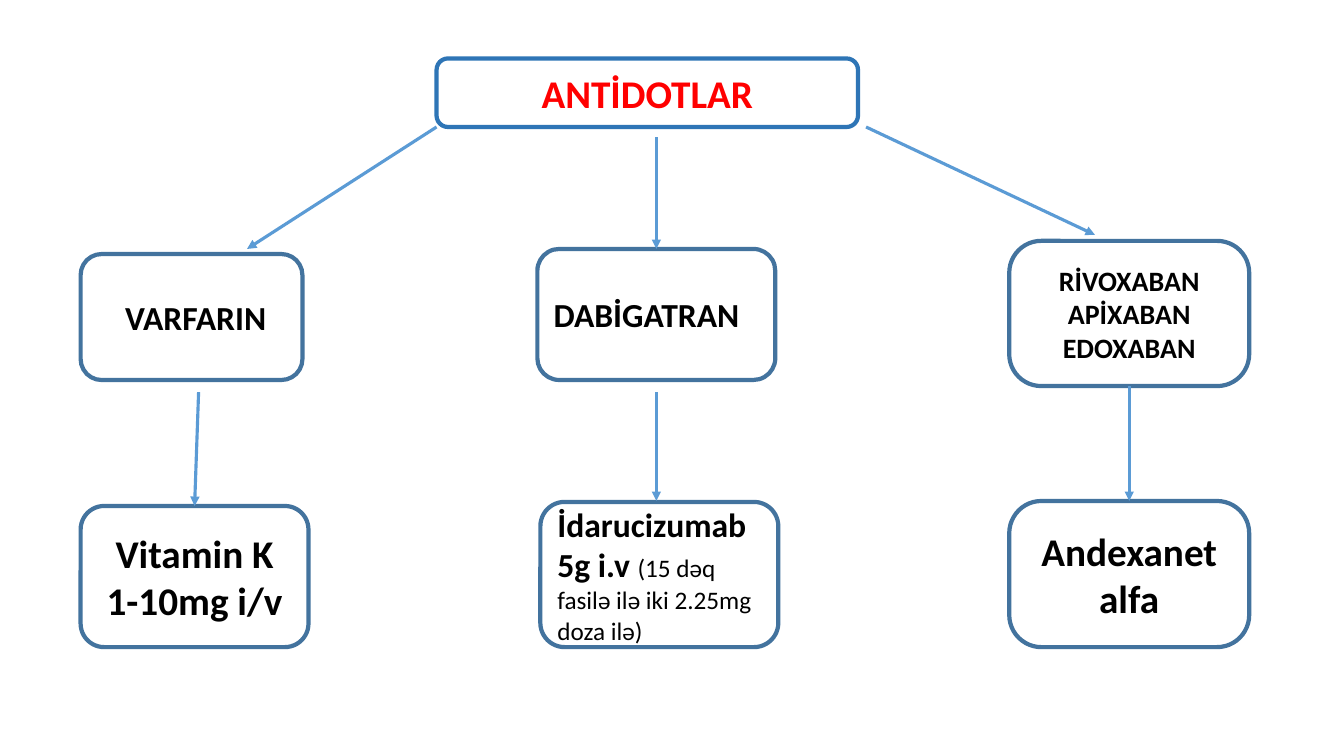
import pptx
import pptx.util
import pptx.dml.color
import pptx.enum.shapes
import pptx.enum.text
import pptx.oxml.ns
import lxml.etree

Inches = pptx.util.Inches
FONT = "Calibri"
COLORS = {
    "white": "FFFFFF", "black": "000000", "title": "FF0000",
    "title_line": "2E75B6", "box_line": "43739E", "arrow": "5B9BD5",
}

# Boxes: name, (left, top, width, height), paragraphs of (text, size, bold), format
BOXES = [
    ("title", (4.33, 0.58, 4.18, 0.68), [[("ANTİDOTLAR", 28, True)]],
     {"color": "title", "line": "title_line"}),
    ("warfarin", (0.8, 2.52, 2.2, 1.25), [[("VARFARIN", 24, True)]],
     {"centered": False, "inset": 0.38}),
    ("xabans", (10.01, 2.39, 2.38, 1.44),
     [[(drug, 20, True)] for drug in ("RİVOXABAN", "APİXABAN", "EDOXABAN")],
     {"corner": 0.22}),
    ("dabigatran", (5.33, 2.47, 2.36, 1.3), [[("DABİGATRAN", 24, True)]],
     {"centered": False}),
    ("vitamin", (0.8, 5.02, 2.26, 1.4), [[("Vitamin K 1-10mg i/v", 28, True)]], {}),
    ("idarucizumab", (5.36, 4.98, 2.36, 1.44),
     [[("İdarucizumab 5g i.v ", 24, True),
       ("(15 dəq fasilə ilə iki 2.25mg doza ilə)", 18, False)]],
     {"centered": False}),
    ("andexanet", (10.01, 4.97, 2.38, 1.45), [[("Andexanet alfa", 28, True)]],
     {"corner": 0.22}),
]

# Arrows: start, end, box joined at its bottom, box joined at its top
ARROWS = [
    ((8.59, 1.26), (10.86, 2.33), None, None),
    ((4.33, 1.26), (2.45, 2.47), None, None),
    ((6.51, 1.36), (6.51, 2.47), None, "dabigatran"),
    ((6.51, 3.89), (6.51, 4.97), None, None),
    ((11.2, 3.83), (11.2, 4.97), "xabans", "andexanet"),
    ((1.97, 3.89), (1.93, 5.02), None, "vitamin"),
]


def rgb(name):
    return pptx.dml.color.RGBColor.from_string(COLORS[name])


def write_text(box, paragraphs, color="black", centered=True, inset=0.1):
    frame = box.text_frame
    frame.word_wrap = True
    frame.margin_left = Inches(inset)
    frame.vertical_anchor = pptx.enum.text.MSO_ANCHOR.MIDDLE
    align = pptx.enum.text.PP_ALIGN
    for index, spans in enumerate(paragraphs):
        para = frame.paragraphs[0] if index == 0 else frame.add_paragraph()
        para.alignment = align.CENTER if centered else align.LEFT
        for text, size, bold in spans:
            span = para.add_run()
            span.text = text
            span.font.name = FONT
            span.font.size = pptx.util.Pt(size)
            span.font.bold = bold
            span.font.color.rgb = rgb(color)


def add_box(page, place, paragraphs, line="box_line", corner=None, **text_format):
    box = page.shapes.add_shape(
        pptx.enum.shapes.MSO_SHAPE.ROUNDED_RECTANGLE, *map(Inches, place))
    box.shadow.inherit = False
    if corner is not None:
        box.adjustments[0] = corner
    box.fill.solid()
    box.fill.fore_color.rgb = rgb("white")
    box.line.color.rgb = rgb(line)
    box.line.width = pptx.util.Pt(3)
    write_text(box, paragraphs, **text_format)
    return box


def add_arrow(page, start, end, source, target):
    arrow = page.shapes.add_connector(
        pptx.enum.shapes.MSO_CONNECTOR.STRAIGHT, *map(Inches, start + end))
    if source is not None:
        arrow.begin_connect(source, 2)
    if target is not None:
        arrow.end_connect(target, 0)
    arrow.line.color.rgb = rgb("arrow")
    arrow.line.width = pptx.util.Pt(2.25)
    # Arrowhead, and no shadow
    qn = pptx.oxml.ns.qn
    lxml.etree.SubElement(arrow.line._get_or_add_ln(), qn("a:tailEnd"), type="triangle")
    lxml.etree.SubElement(arrow._element.spPr, qn("a:effectLst"))


def main():
    deck = pptx.Presentation()
    deck.slide_width, deck.slide_height = Inches(13.33), Inches(7.5)
    page = deck.slides.add_slide(deck.slide_layouts[6])

    # Title, drugs and antidotes
    boxes = {name: add_box(page, place, paragraphs, **style)
             for name, place, paragraphs, style in BOXES}

    # Arrows between the levels
    for start, end, source, target in ARROWS:
        add_arrow(page, start, end, boxes.get(source), boxes.get(target))

    deck.save("out.pptx")


if __name__ == "__main__":
    main()
